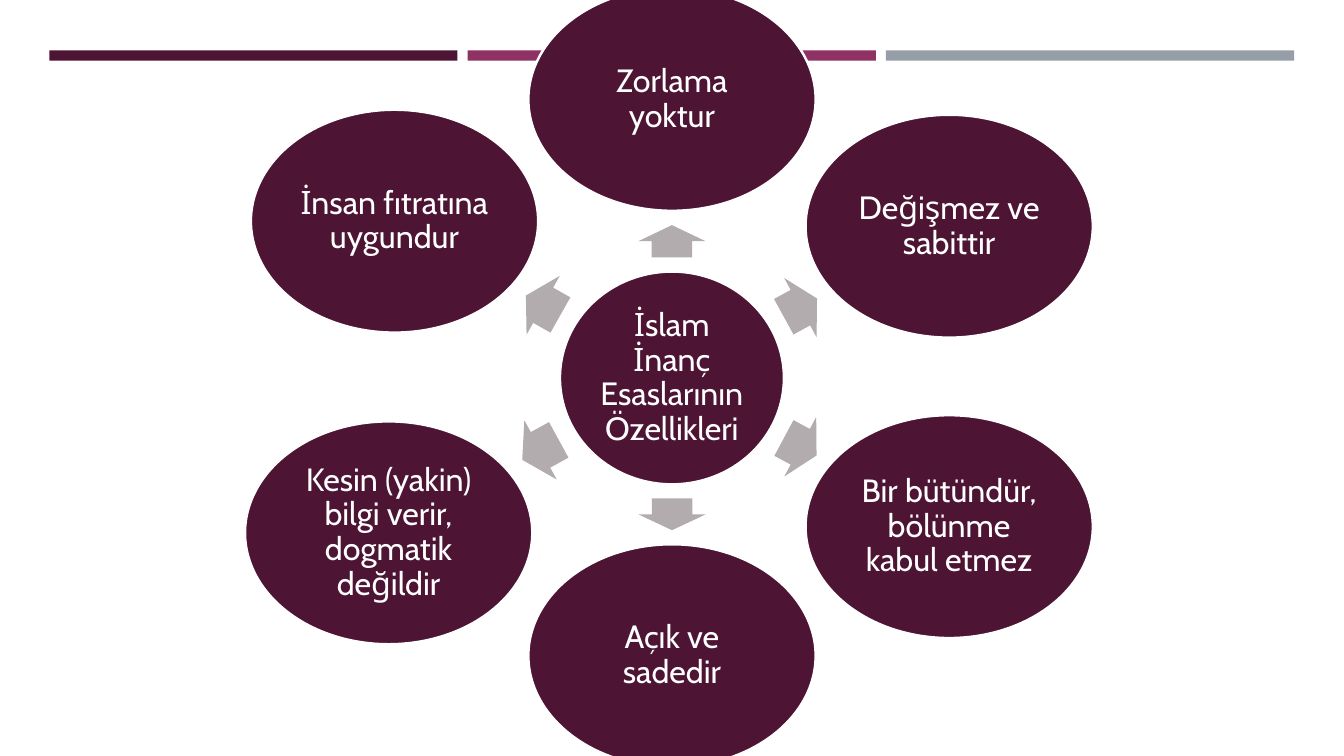
import math

from pptx import Presentation
from pptx import util as u
from pptx.dml.color import RGBColor
from pptx.enum import shapes, text

COLORS = {"dark": "4D1434", "plum": "903163", "steel": "969FA7",
          "arrow": "B2ACAE", "white": "FFFFFF"}
FONT = {"name": "Cabin", "size": u.Pt(23)}
FRAME = {"margin_left": u.Inches(0.03), "margin_right": u.Inches(0.03),
         "margin_top": u.Inches(0.03), "margin_bottom": u.Inches(0.03),
         "word_wrap": True, "vertical_anchor": text.MSO_ANCHOR.MIDDLE}
PARAGRAPH = {"alignment": text.PP_ALIGN.CENTER, "line_spacing": 0.9}

# The slide is a grid of 48 columns by 27 rows of square cells
COLUMNS, ROWS = 48, 27
CELL = u.Inches(7.5) / ROWS

HUB_CENTER, HUB_SIZE = (24, 13.5), (8, 7.6)
PETAL_SIZE = (10.26, 7.96)
PETALS = [
    ("Zorlama yoktur", (24, 3.55)),
    ("Değişmez ve sabittir", (33.9, 8.08)),
    ("Bir bütündür, bölünme kabul etmez", (33.9, 18.81)),
    ("Açık ve sadedir", (24, 23.42)),
    ("Kesin (yakin) bilgi verir, dogmatik değildir", (13.88, 19.03)),
    ("İnsan fıtratına uygundur", (14.09, 7.9)),
]
ARROW_WIDTH, ARROW_SHARE = 2.41, 0.53


def apply(target, values):
    for name, value in values.items():
        setattr(target, name, value)


def ellipse_radius(size, angle):
    """Distance from an ellipse's centre to its edge in one direction."""
    return 1 / math.hypot(math.cos(angle) / (size[0] / 2),
                          math.sin(angle) / (size[1] / 2))


class Diagram:
    def __init__(self, slide):
        self.slide = slide

    def shape(self, kind, center, size, color):
        left, top = (c - s / 2 for c, s in zip(center, size))
        box = self.slide.shapes.add_shape(
            kind, *(u.Emu(round(v * CELL)) for v in (left, top, *size)))
        box.shadow.inherit = False
        box.fill.solid()
        box.fill.fore_color.rgb = RGBColor.from_string(COLORS[color])
        box.line.fill.background()
        return box

    def bar(self, left, top, width, height, color):
        self.shape(shapes.MSO_SHAPE.RECTANGLE,
                   (left + width / 2, top + height / 2), (width, height), color)

    def bubble(self, wording, center, size):
        box = self.shape(shapes.MSO_SHAPE.OVAL, center, size, "dark")
        white = RGBColor.from_string(COLORS["white"])
        box.line.color.rgb = white
        box.line.width = u.Pt(1.75)
        apply(box.text_frame, FRAME)
        para = box.text_frame.paragraphs[0]
        apply(para, PARAGRAPH)
        span = para.add_run()
        span.text = wording
        apply(span.font, FONT)
        span.font.color.rgb = white

    def arrow_to(self, petal_center):
        """Centre an arrow in the gap between the hub and a petal."""
        across = petal_center[0] - HUB_CENTER[0]
        down = petal_center[1] - HUB_CENTER[1]
        angle = math.atan2(down, across)
        start = ellipse_radius(HUB_SIZE, angle)
        end = math.hypot(across, down) - ellipse_radius(PETAL_SIZE, angle)
        middle = (start + end) / 2
        center = (HUB_CENTER[0] + middle * math.cos(angle),
                  HUB_CENTER[1] + middle * math.sin(angle))
        length = (end - start) * ARROW_SHARE
        arrow = self.shape(shapes.MSO_SHAPE.RIGHT_ARROW, center,
                           (length, ARROW_WIDTH), "arrow")
        arrow.adjustments[0] = 0.6
        arrow.adjustments[1] = 0.5
        arrow.rotation = math.degrees(angle) % 360


def main():
    deck = Presentation()
    deck.slide_width = u.Emu(round(COLUMNS * CELL))
    deck.slide_height = u.Emu(round(ROWS * CELL))
    diagram = Diagram(deck.slides.add_slide(deck.slide_layouts[6]))

    # Three header bars
    for index, color in enumerate(("dark", "plum", "steel")):
        diagram.bar(1.76 + 14.94 * index, 1.8, 14.58, 0.37, color)

    # Hub with its ring of petals
    diagram.bubble("İslam İnanç Esaslarının Özellikleri", HUB_CENTER, HUB_SIZE)
    for wording, center in PETALS:
        diagram.arrow_to(center)
        diagram.bubble(wording, center, PETAL_SIZE)

    deck.save("out.pptx")


if __name__ == "__main__":
    main()
